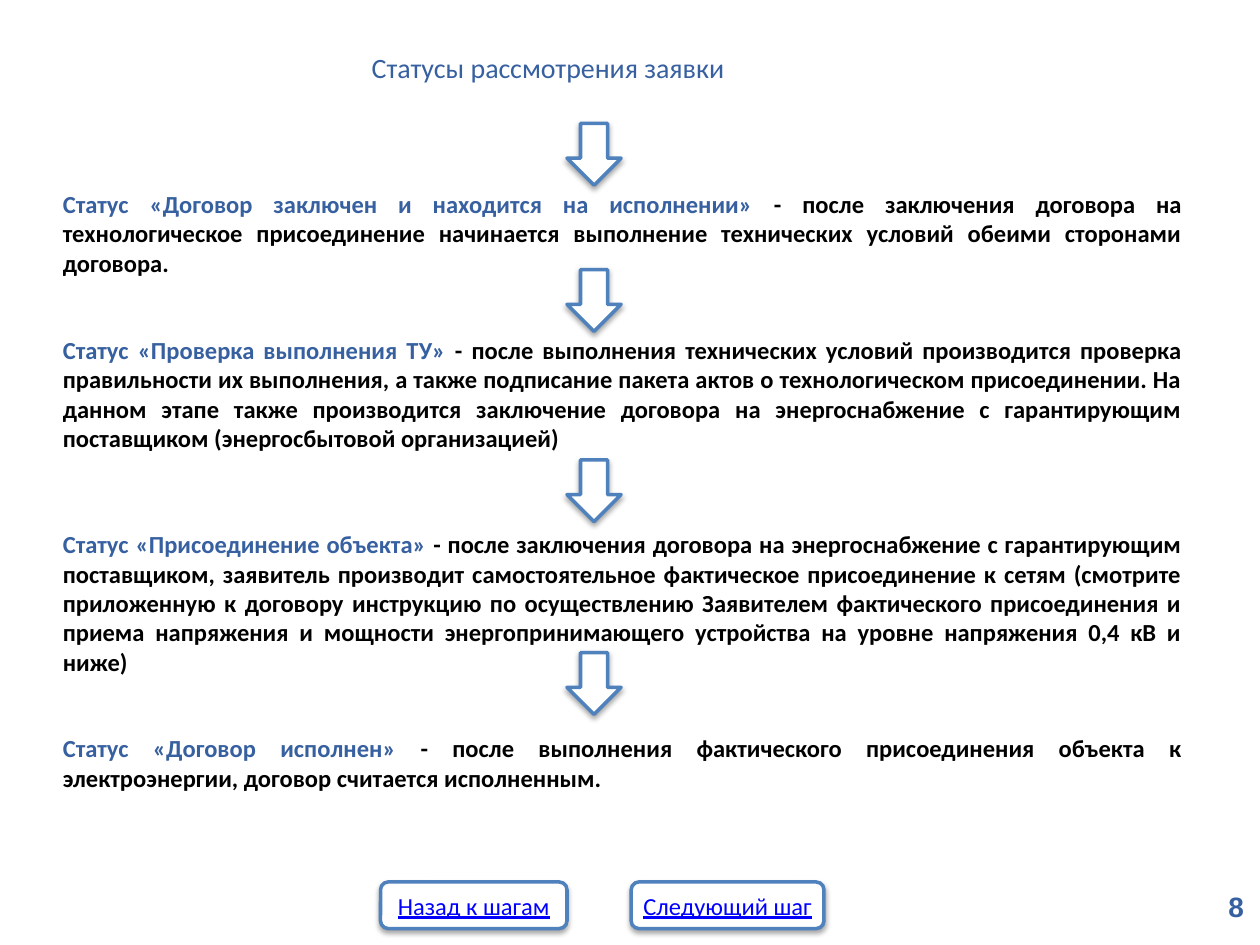
import pptx
import pptx.util
import pptx.dml.color
import pptx.enum.shapes
import pptx.enum.text
import pptx.oxml.ns
from lxml import etree

Inches = pptx.util.Inches
Pt = pptx.util.Pt
SHAPES = pptx.enum.shapes.MSO_SHAPE
ALIGN = pptx.enum.text.PP_ALIGN
ANCHOR = pptx.enum.text.MSO_ANCHOR

COLORS = {"heading": "3760A0", "body": "000000", "link": "0000FF",
          "outline": "4F81BD", "fill": "FFFFFF"}

TITLE = "Статусы рассмотрения заявки"
STATUSES = [
    (1.45, 0.81, "Статус «Договор заключен и находится на исполнении» ",
     "- после заключения договора на технологическое присоединение начинается "
     "выполнение технических условий обеими сторонами договора."),
    (2.61, 1.04, "Статус «Проверка выполнения ТУ» ",
     "- после выполнения технических условий производится проверка правильности "
     "их выполнения, а также подписание пакета актов о технологическом "
     "присоединении. На данном этапе также производится заключение договора на "
     "энергоснабжение с гарантирующим поставщиком (энергосбытовой организацией)"),
    (4.15, 1.28, "Статус «Присоединение объекта» ",
     "- после заключения договора на энергоснабжение с гарантирующим поставщиком, "
     "заявитель производит самостоятельное фактическое присоединение к сетям "
     "(смотрите приложенную к договору инструкцию по осуществлению Заявителем "
     "фактического присоединения и приема напряжения и мощности "
     "энергопринимающего устройства на уровне напряжения 0,4 кВ и ниже)"),
    (5.77, 0.57, "Статус «Договор исполнен» ",
     "- после выполнения фактического присоединения объекта к электроэнергии, "
     "договор считается исполненным."),
]
ARROW_TOPS = [0.98, 2.14, 3.65, 5.18]
BUTTONS = [(3.02, 1.48, "Назад к шагам"), (5.01, 1.53, "Следующий шаг")]
PAGE_NUMBER = "8"


def rgb(name):
    return pptx.dml.color.RGBColor.from_string(COLORS[name])


def add_span(para, text, color, **formats):
    span = para.add_run()
    span.text = text
    for key, value in {"name": "Calibri", "size": Pt(14), **formats}.items():
        setattr(span.font, key, value)
    span.font.color.rgb = rgb(color)


def set_frame(frame, anchor=ANCHOR.TOP, inset=None):
    formats = {"word_wrap": True, "vertical_anchor": anchor,
               "auto_size": pptx.enum.text.MSO_AUTO_SIZE.NONE}
    if inset is not None:
        for side in ("left", "top", "right", "bottom"):
            formats["margin_" + side] = Inches(inset)
    for key, value in formats.items():
        setattr(frame, key, value)
    return frame.paragraphs[0]


def add_outlined(page, kind, *place):
    shape = page.shapes.add_shape(kind, *map(Inches, place))
    shape.fill.solid()
    shape.fill.fore_color.rgb = rgb("fill")
    shape.line.color.rgb = rgb("outline")
    shape.line.width = Pt(2)
    shape.shadow.inherit = False
    qn = pptx.oxml.ns.qn
    effects = shape._element.spPr.find(qn("a:effectLst"))
    shadow = etree.SubElement(effects, qn("a:outerShdw"), blurRad=str(Pt(3)),
                              dist=str(Pt(1.8)), dir="5400000", rotWithShape="0")
    tint = etree.SubElement(shadow, qn("a:srgbClr"), val=COLORS["body"])
    etree.SubElement(tint, qn("a:alpha"), val="35000")
    return shape


def add_text_box(page, *place):
    box = page.shapes.add_textbox(*map(Inches, place))
    return set_frame(box.text_frame)


def main():
    deck = pptx.Presentation()
    deck.slide_width, deck.slide_height = Inches(10), Inches(7.5)
    page = deck.slides.add_slide(deck.slide_layouts[5])

    title = page.shapes.title
    place = {"left": 2.9, "top": 0.35, "width": 7.1, "height": 0.37}
    for key, value in place.items():
        setattr(title, key, Inches(value))
    para = set_frame(title.text_frame, inset=0.05)
    para.alignment = ALIGN.LEFT
    add_span(para, TITLE, "heading", size=Pt(16))

    for arrow_top, (top, height, status, detail) in zip(ARROW_TOPS, STATUSES):
        add_outlined(page, SHAPES.DOWN_ARROW, 4.5, arrow_top, 0.43, 0.49)
        para = add_text_box(page, 0.4, top, 9.08, height)
        para.alignment = ALIGN.JUSTIFY
        add_span(para, status, "heading", bold=True)
        add_span(para, detail, "body", bold=True)

    para = add_text_box(page, 9.65, 7.01, 0.35, 0.37)
    add_span(para, PAGE_NUMBER, "heading", name="Arial", size=Pt(16), bold=True)

    for left, width, label in BUTTONS:
        button = add_outlined(page, SHAPES.ROUNDED_RECTANGLE, left, 7, width, 0.37)
        para = set_frame(button.text_frame, ANCHOR.MIDDLE, 0.05)
        para.alignment = ALIGN.CENTER
        add_span(para, label, "link", underline=True)

    deck.save("out.pptx")


if __name__ == "__main__":
    main()
